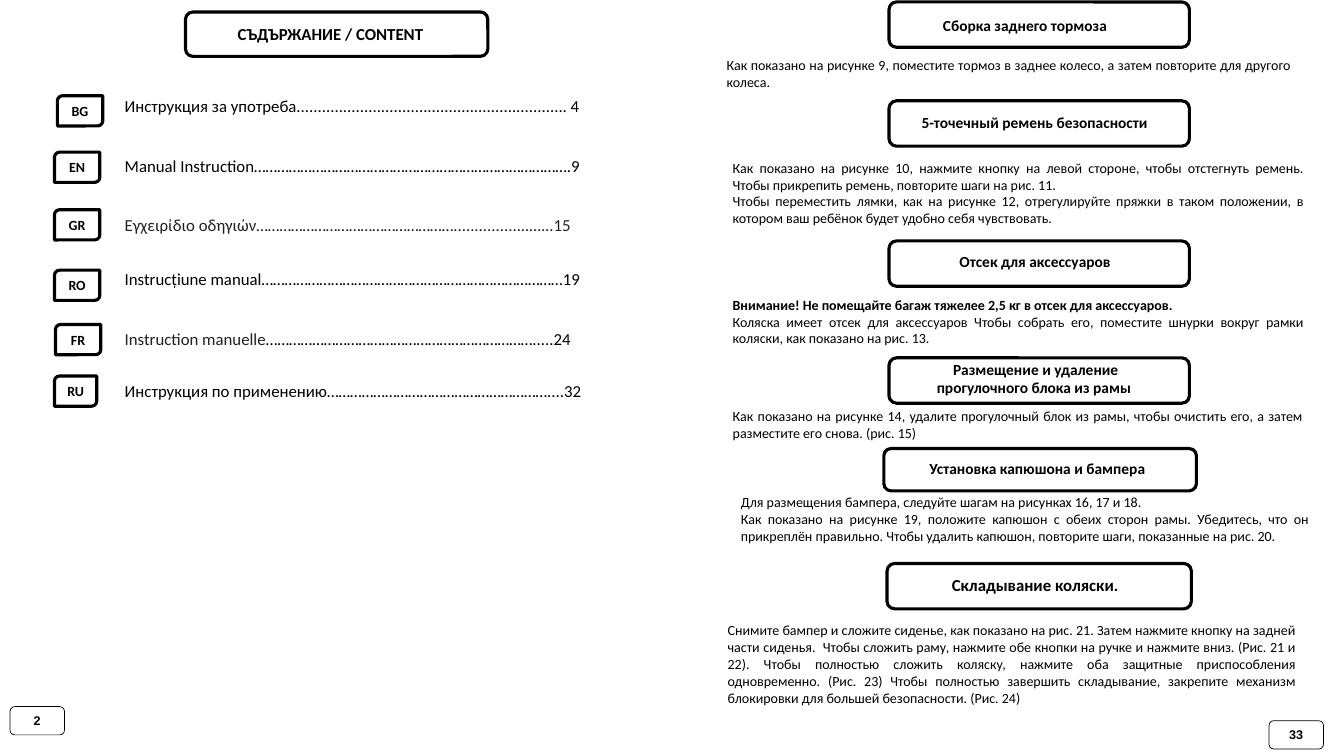
from dataclasses import dataclass

from pptx import Presentation
from pptx.dml.color import RGBColor
from pptx.enum.shapes import MSO_SHAPE as Shape
from pptx.enum.text import MSO_ANCHOR as Anchor, PP_ALIGN as Align
from pptx.util import Pt


@dataclass(frozen=True)
class Theme:
    black: str = "000000"
    grey: str = "212121"
    white: str = "FFFFFF"
    font: str = "Calibri"
    page_font: str = "Arial"
    title: float = 12
    heading: float = 11
    body: float = 10
    page: float = 9
    frame_line: float = 2.25
    page_line: float = 0.5


T = Theme()

# Boxes are (left, top, width, height)
TITLE = ("СЪДЪРЖАНИЕ / CONTENT", (132.5, 8.6, 216, 31.7), (162.7, 13.7, 149, 21.6))

# (name, leader and page, name colour, leader colour, space before)
CONTENTS = [
    ("Инструкция за употреба", "................................................................ 4",
     T.black, T.black, 0),
    ("Manual Instruction", "……………………………………………………………………….9", T.black, T.black, 28.3),
    ("Εγχειρίδιο οδηγιών", "……………………………………………..................…...15", T.grey, T.grey, 28.3),
    ("Instrucțiune manual", "……………………………………………………………………19", T.black, T.black, 24),
    ("Instruction manuelle", "…………………………………………………………….....24", T.grey, T.black, 28.3),
]
LAST_ENTRY = [("Инструкция по применению", "…………………………………………………....32", T.black, T.black, 0)]
CONTENTS_BOX = (82, 64.8, 345.6, 234.7)
LAST_ENTRY_BOX = (82, 268.6, 480, 21.6)

TAG_HEIGHT = 21.6
# (language, left, top, width)
TAGS = [
    ("BG", 41, 68.4, 32.4),
    ("EN", 38.9, 108.7, 32.4),
    ("GR", 38.9, 149.8, 32.4),
    ("RO", 38.9, 193, 32.4),
    ("FR", 39.6, 231.8, 32.4),
    ("RU", 38.9, 268.6, 30.2),
]

PAGE_SIZE = (38.9, 20.2)
PAGES = [("2", 7.2, 504.7), ("33", 906.5, 514.8)]

INTRO = ("Как показано на рисунке 9, поместите тормоз в заднее колесо, "
         "а затем повторите для другого колеса. ")
INTRO_BOX = (511.9, 36.7, 416.9, 31.7)

# (heading, heading size, frame box, heading box, body box, body paragraphs)
SECTIONS = [
    ("Сборка заднего тормоза", T.heading,
     (635, 1.4, 214.6, 32.4), (666, 7.9, 132.5, 20.9), None, []),
    ("5-точечный ремень безопасности", T.heading,
     (635, 72, 214.6, 32.4), (650.2, 77, 177.8, 20.9), (523.4, 113.8, 407.5, 60.5),
     ["Как показано на рисунке 10, нажмите кнопку на левой стороне, чтобы отстегнуть ремень. "
      "Чтобы прикрепить ремень, повторите шаги на рис. 11.  ",
      "Чтобы переместить лямки, как на рисунке 12, отрегулируйте пряжки в таком положении, "
      "в котором ваш ребёнок будет удобно себя чувствовать."]),
    ("Отсек для аксессуаров", T.heading,
     (635, 172.1, 214.6, 32.4), (677.5, 176.4, 123.8, 20.9), (523.4, 211.7, 407.5, 48.2),
     ["Внимание! Не помещайте багаж тяжелее 2,5 кг в отсек для аксессуаров. ",
      "Коляска имеет отсек для аксессуаров Чтобы собрать его, поместите шнурки вокруг рамки "
      "коляски, как показано на рис. 13. "]),
    ("Размещение и удаление прогулочного блока из рамы ", T.heading,
     (635, 255.6, 214.6, 32.4), (653.8, 253.4, 172.1, 33.8), (523.4, 290.9, 406.8, 24.5),
     ["Как показано на рисунке 14, удалите прогулочный блок из рамы, чтобы очистить его, "
      "а затем разместите его снова. (рис. 15) "]),
    ("Установка капюшона и бампера ", T.heading,
     (631.4, 320.4, 223.2, 30.2), (655.9, 324.7, 172.8, 20.9), (529.2, 352.8, 405.4, 48.2),
     ["Для размещения бампера, следуйте шагам на рисунках 16, 17 и 18.",
      "Как показано на рисунке 19, положите капюшон с обеих сторон рамы. Убедитесь, что он "
      "прикреплён правильно. Чтобы удалить капюшон, повторите шаги, показанные на рис. 20. "]),
    ("Складывание коляски. ", T.title,
     (633.6, 402.5, 217.4, 32.4), (672.5, 406.8, 133.9, 21.6), (519.8, 444.2, 405.4, 60.5),
     ["Снимите бампер и сложите сиденье, как показано на рис. 21. Затем нажмите кнопку на "
      "задней части сиденья.  Чтобы сложить раму, нажмите обе кнопки на ручке и нажмите вниз. "
      "(Рис. 21 и 22). Чтобы полностью сложить коляску, нажмите оба защитные приспособления "
      "одновременно. (Рис. 23) Чтобы полностью завершить складывание, закрепите механизм "
      "блокировки для большей безопасности. (Рис. 24)"]),
]
WARNING = "Внимание!"
TWO_LINE_HEIGHT = 30


def style(r, size, bold=False, color=T.black, font=T.font):
    r.font.size, r.font.bold, r.font.name = Pt(size), bold, font
    r.font.color.rgb = RGBColor.from_string(color)


def add_box(s, kind, box, line=None, fill=None):
    sp = s.shapes.add_shape(kind, *map(Pt, box))
    sp.shadow.inherit = False
    if fill:
        sp.fill.solid()
        sp.fill.fore_color.rgb = RGBColor.from_string(fill)
    else:
        sp.fill.background()
    if line:
        sp.line.width = Pt(line)
        sp.line.color.rgb = RGBColor.from_string(T.black)
    else:
        sp.line.fill.background()
    return sp


def write(tf, paragraphs, size, align, bold=False, font=T.font, wrap=True):
    tf.word_wrap = wrap
    tf.text = "\n".join(paragraphs)
    for p in tf.paragraphs:
        p.alignment = align
        style(p.runs[0], size, bold or p.text.startswith(WARNING), font=font)


def add_text(s, box, *args, **kwargs):
    write(s.shapes.add_textbox(*map(Pt, box)).text_frame, *args, **kwargs)


def add_label(s, kind, box, text, size, line, font=T.font):
    """Outlined shape with its own centred bold text."""
    tf = add_box(s, kind, box, line).text_frame
    tf.vertical_anchor = Anchor.MIDDLE
    write(tf, [text], size, Align.CENTER, bold=True, font=font)


def add_entries(s, box, entries):
    tf = s.shapes.add_textbox(*map(Pt, box)).text_frame
    tf.word_wrap = False
    for i, (name, leader, name_color, leader_color, gap) in enumerate(entries):
        p = tf.add_paragraph() if i else tf.paragraphs[0]
        p.alignment, p.space_before = Align.LEFT, Pt(gap)
        for text, color in ((name, name_color), (leader, leader_color)):
            r = p.add_run()
            r.text = text
            style(r, T.title, color=color)


def add_body(s, box, paragraphs):
    tf = add_box(s, Shape.RECTANGLE, box, fill=T.white).text_frame
    tf.margin_left = tf.margin_top = tf.margin_right = tf.margin_bottom = 0
    tf.vertical_anchor = Anchor.TOP
    write(tf, paragraphs, T.body, Align.JUSTIFY)


def main():
    prs = Presentation()
    prs.slide_width, prs.slide_height = Pt(960), Pt(540)
    s = prs.slides.add_slide(prs.slide_layouts[6])

    title, frame, title_box = TITLE
    add_box(s, Shape.ROUNDED_RECTANGLE, frame, T.frame_line)
    add_text(s, title_box, [title], T.title, Align.LEFT, bold=True, wrap=False)
    add_entries(s, CONTENTS_BOX, CONTENTS)
    add_entries(s, LAST_ENTRY_BOX, LAST_ENTRY)
    for language, x, y, w in TAGS:
        add_label(s, Shape.ROUND_2_DIAG_RECTANGLE, (x, y, w, TAG_HEIGHT),
                  language, T.body, T.frame_line)

    add_text(s, INTRO_BOX, [INTRO], T.body, Align.JUSTIFY)
    for heading, size, frame, heading_box, body_box, paragraphs in SECTIONS:
        add_box(s, Shape.ROUNDED_RECTANGLE, frame, T.frame_line)
        add_text(s, heading_box, [heading], size, Align.CENTER, bold=True,
                 wrap=heading_box[3] > TWO_LINE_HEIGHT)
        if body_box:
            add_body(s, body_box, paragraphs)

    for number, x, y in PAGES:
        add_label(s, Shape.ROUNDED_RECTANGLE, (x, y, *PAGE_SIZE),
                  number, T.page, T.page_line, T.page_font)
    prs.save("out.pptx")


if __name__ == "__main__":
    main()
